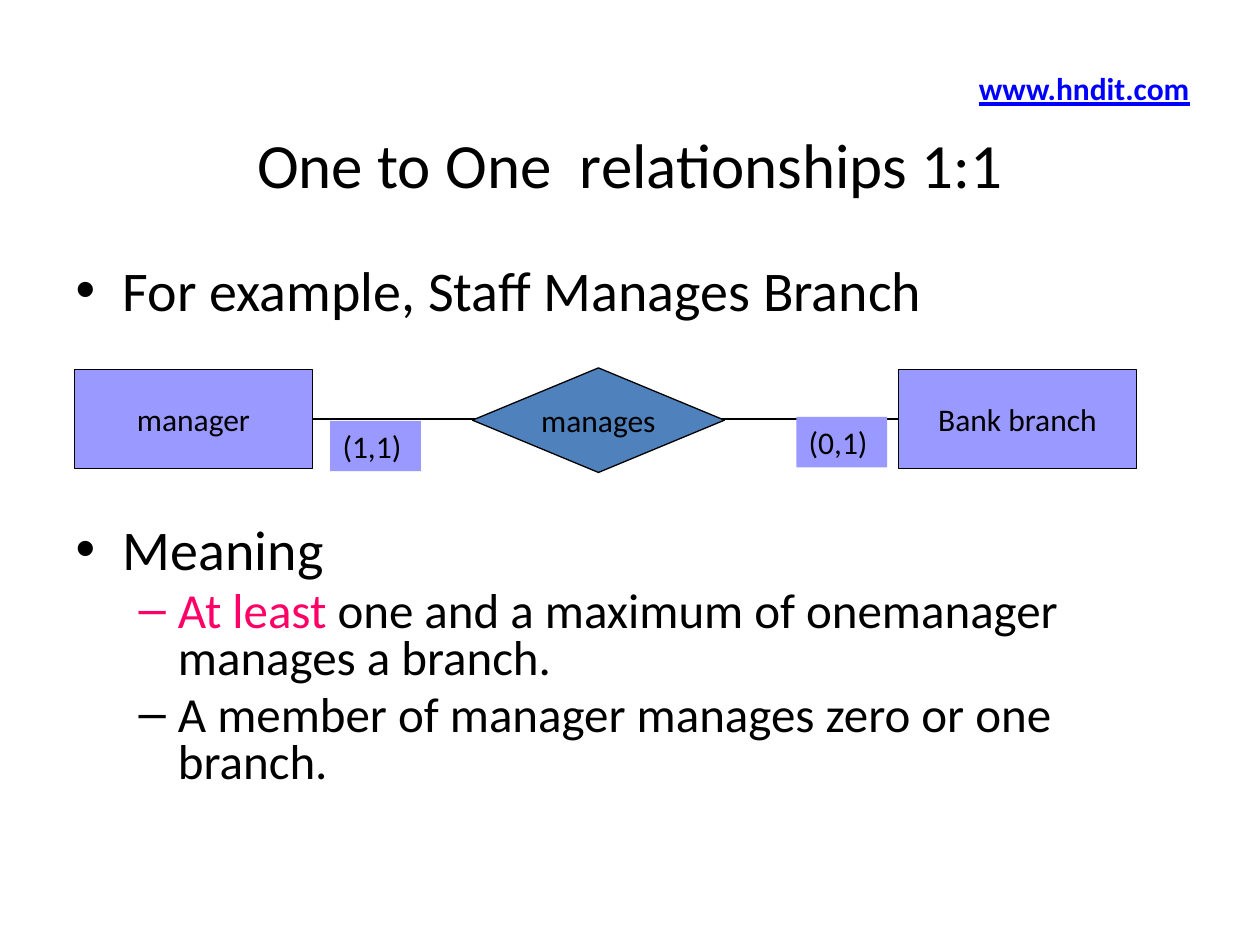
from dataclasses import dataclass
from typing import Optional

from lxml.etree import SubElement
from pptx import Presentation
from pptx.dml.color import RGBColor
from pptx.enum.shapes import MSO_CONNECTOR, MSO_SHAPE
from pptx.enum.text import MSO_ANCHOR, MSO_AUTO_SIZE, PP_ALIGN
from pptx.oxml.ns import qn
from pptx.util import Inches, Pt

FONT = "Calibri"
COLORS = {"text": "000000", "entity": "9999FF", "relation": "4F81BD",
          "accent": "FF0066", "link": "0000FF"}

# Slide grid: 100 columns by 75 rows
COLS, ROWS = 100, 75
prs = Presentation()
prs.slide_width, prs.slide_height = Inches(10), Inches(7.5)
slide = prs.slides.add_slide(prs.slide_layouts[1])


@dataclass
class Box:
    col: float
    row: float
    cols: float
    rows: float

    def emu(self) -> tuple:
        w, h = prs.slide_width / COLS, prs.slide_height / ROWS
        return (round(self.col * w), round(self.row * h),
                round(self.cols * w), round(self.rows * h))


@dataclass
class Node:
    text: str
    box: Box
    fill: str = "entity"
    shape: MSO_SHAPE = MSO_SHAPE.RECTANGLE
    outlined: bool = True


@dataclass
class Item:
    runs: list
    size: int
    level: int = 0
    before: float = 0


def rgb(name: str) -> RGBColor:
    return RGBColor.from_string(COLORS[name])


def add_run(p, text: str, size: int, color: str = "text"):
    r = p.add_run()
    r.text = text
    r.font.name, r.font.size = FONT, Pt(size)
    r.font.color.rgb = rgb(color)
    return r


def place(sp, box: Box) -> None:
    sp.left, sp.top, sp.width, sp.height = box.emu()


def draw_node(node: Node):
    sp = slide.shapes.add_shape(node.shape, *node.box.emu())
    sp.shadow.inherit = False
    sp.fill.solid()
    sp.fill.fore_color.rgb = rgb(node.fill)
    tf = sp.text_frame
    tf.word_wrap = False
    p = tf.paragraphs[0]
    if node.outlined:
        sp.line.color.rgb = rgb("text")
        sp.line.width = Pt(0.75)
        tf.vertical_anchor, p.alignment = MSO_ANCHOR.MIDDLE, PP_ALIGN.CENTER
    else:
        sp.line.fill.background()
        tf.vertical_anchor, p.alignment = MSO_ANCHOR.TOP, PP_ALIGN.LEFT
    add_run(p, node.text, 18)
    return sp


def join(start, end) -> None:
    line = slide.shapes.add_connector(MSO_CONNECTOR.STRAIGHT, 0, 0, 0, 0)
    line.begin_connect(start, 3)
    line.end_connect(end, 1)
    line.line.color.rgb = rgb("text")
    line.line.width = Pt(0.75)
    SubElement(line._element.spPr, qn("a:effectLst"))


def write_list(tf, items: list) -> None:
    p: Optional[object] = None
    for item in items:
        p = tf.add_paragraph() if p is not None else tf.paragraphs[0]
        p.level = item.level
        p.line_spacing = 0.8
        p.space_before = Pt(item.before)
        for text, color in item.runs:
            add_run(p, text, item.size, color)


# Title
title = slide.shapes.title
place(title, Box(5, 6.7, 90, 12.5))
title.text_frame.vertical_anchor = MSO_ANCHOR.MIDDLE
p = title.text_frame.paragraphs[0]
p.alignment = PP_ALIGN.CENTER
add_run(p, "One to One  relationships 1:1", 36)

# Example and its meaning, with room for the diagram between them
body = slide.placeholders[1]
place(body, Box(5, 20.8, 90, 46.2))
body.text_frame.auto_size = MSO_AUTO_SIZE.NONE
write_list(body.text_frame, [
    Item([("For example, Staff Manages Branch", "text")], 32),
    Item([("Meaning", "text")], 32, before=117.3),
    Item([("At least", "accent"),
          (" one and a maximum of onemanager manages a branch.", "text")],
         28, level=1, before=5.6),
    Item([("A member of manager manages zero or one branch.", "text")],
         28, level=1, before=5.6),
])

# Entities joined by the relationship
manager, branch = [draw_node(Node(text, Box(col, 29.3, 18.9, 7.9)))
                   for text, col in (("manager", 5.9), ("Bank branch", 71.3))]
join(manager, branch)
for text, col, row in (("(1,1)", 26.2, 33.4), ("(0,1)", 63.2, 33.1)):
    draw_node(Node(text, Box(col, row, 7.2, 4), outlined=False))
draw_node(Node("manages", Box(37.5, 29.2, 20, 8.3), "relation", MSO_SHAPE.DIAMOND))

# Web address
site = slide.shapes.add_textbox(*Box(76.7, 5, 18.8, 4).emu())
site.text_frame.word_wrap = False
r = add_run(site.text_frame.paragraphs[0], "www.hndit.com", 18, "link")
r.font.bold = r.font.underline = True

prs.save("out.pptx")
